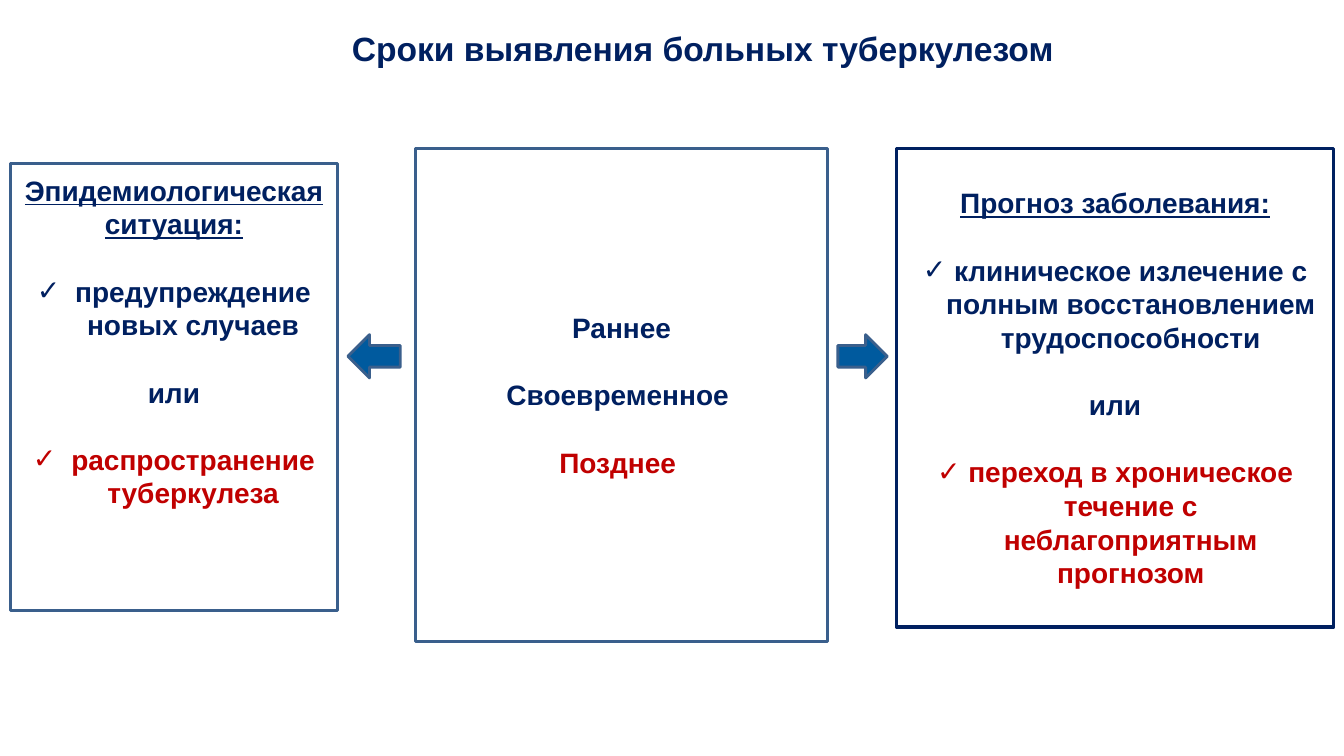
from lxml.etree import SubElement
from pptx import Presentation
from pptx.dml.color import RGBColor
from pptx.enum.shapes import MSO_SHAPE as SHAPE
from pptx.enum.text import MSO_ANCHOR as ANCHOR, PP_ALIGN as ALIGN
from pptx.oxml.ns import qn
from pptx.util import Inches, Pt

NAVY, RED, STEEL, BLUE, WHITE = "002060", "C00000", "3A5F8C", "005A9E", "FFFFFF"


def rgb(value):
    return RGBColor.from_string(value)


class Deck:
    font = "Arial"
    size = 20
    leading = 24

    def __init__(self, width, height):
        self.prs = Presentation()
        self.prs.slide_width, self.prs.slide_height = Inches(width), Inches(height)
        self.s = self.prs.slides.add_slide(self.prs.slide_layouts[6])

    def paragraph(self, p, text, color=NAVY, size=size, underline=False):
        p.alignment = ALIGN.CENTER
        r = p.add_run()
        r.text = text
        style = {"name": self.font, "size": Pt(size), "bold": True, "underline": underline}
        for name, value in style.items():
            setattr(r.font, name, value)
        r.font.color.rgb = rgb(color)

    def bullet(self, p, indent):
        pPr = p._p.get_or_add_pPr()
        pPr.set("marL", str(Inches(indent)))
        pPr.set("indent", str(-Inches(indent)))
        SubElement(pPr, qn("a:buFont")).set("typeface", self.font)
        SubElement(pPr, qn("a:buChar")).set("char", "✓")

    def title(self, at, text):
        tf = self.s.shapes.add_textbox(*map(Inches, at)).text_frame
        tf.word_wrap = True
        tf.vertical_anchor = ANCHOR.MIDDLE
        self.paragraph(tf.paragraphs[0], text, size=24)

    def shape(self, kind, at, fill, line, weight):
        sp = self.s.shapes.add_shape(kind, *map(Inches, at))
        sp.shadow.inherit = False
        sp.fill.solid()
        sp.fill.fore_color.rgb = rgb(fill)
        sp.line.color.rgb = rgb(line)
        sp.line.width = Pt(weight)
        return sp

    def box(self, at, line, items, indent=0, anchor=ANCHOR.MIDDLE):
        tf = self.shape(SHAPE.RECTANGLE, at, WHITE, line, 2.25).text_frame
        frame = {"word_wrap": True, "vertical_anchor": anchor,
                 "margin_top": Inches(0.1), "margin_bottom": Inches(0.1)}
        for name, value in frame.items():
            setattr(tf, name, value)
        for i, (text, color, role) in enumerate(items):
            p = tf.add_paragraph() if i else tf.paragraphs[0]
            p.line_spacing = Pt(self.leading)
            p.space_before = Pt(self.leading if i else 0)
            self.paragraph(p, text, color, underline=role == "heading")
            if role == "bullet":
                self.bullet(p, indent)

    def arrow(self, kind, left, width):
        self.shape(kind, (left, 3.32, width, 0.43), BLUE, STEEL, 2)


def outcomes(heading, good, bad):
    return [(heading, NAVY, "heading"), (good, NAVY, "bullet"),
            ("или", NAVY, "plain"), (bad, RED, "bullet")]


def main():
    deck = Deck(13.33, 7.5)
    deck.title((1.21, 0, 11.52, 0.95), "Сроки выявления больных туберкулезом")
    deck.box((4.12, 1.47, 4.09, 4.89), STEEL, [
        ("Раннее", NAVY, "plain"),
        ("Своевременное ", NAVY, "plain"),
        ("Позднее ", RED, "plain"),
    ])
    deck.box((8.89, 1.47, 4.34, 4.75), NAVY, outcomes(
        "Прогноз заболевания:",
        "клиническое излечение с полным восстановлением трудоспособности",
        "переход в хроническое течение с неблагоприятным прогнозом",
    ), indent=0.31)
    deck.box((0.1, 1.62, 3.25, 4.44), STEEL, outcomes(
        "Эпидемиологическая ситуация:",
        "предупреждение новых случаев",
        "распространение туберкулеза",
    ), indent=0.38, anchor=ANCHOR.TOP)
    deck.arrow(SHAPE.RIGHT_ARROW, 8.31, 0.49)
    deck.arrow(SHAPE.LEFT_ARROW, 3.45, 0.52)
    deck.prs.save("out.pptx")


if __name__ == "__main__":
    main()
